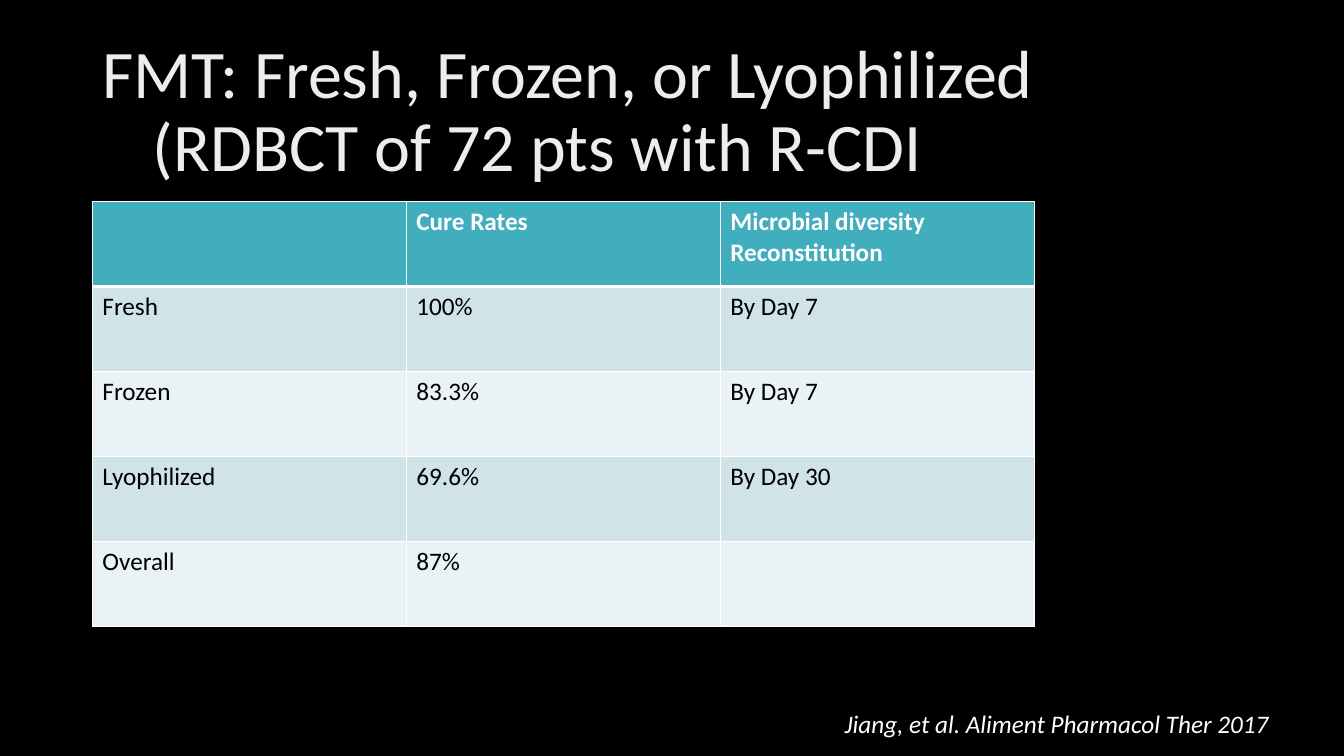
from dataclasses import dataclass

from lxml.etree import SubElement
from pptx import Presentation
from pptx.dml.color import RGBColor
from pptx.enum.text import MSO_ANCHOR as Anchor, MSO_AUTO_SIZE as AutoSize, PP_ALIGN as Align
from pptx.oxml import parse_xml
from pptx.oxml.ns import nsdecls, qn
from pptx.slide import Slide
from pptx.table import _Cell as Cell
from pptx.text.text import Font
from pptx.util import Emu, Pt

PX = 9525
FONT = "Calibri"
BLACK = RGBColor(0x00, 0x00, 0x00)
WHITE = RGBColor(0xFF, 0xFF, 0xFF)
TEAL = RGBColor(0x41, 0xAE, 0xBD)
BAND_DARK = RGBColor(0xCF, 0xE3, 0xE8)
BAND_LIGHT = RGBColor(0xE9, 0xF2, 0xF4)
SILVER = RGBColor(0xBF, 0xBF, 0xBF)
PALE = RGBColor(0xED, 0xED, 0xED)
TITLE_STOPS = ((0, SILVER), (28, PALE), (100, WHITE))
TITLE_ANGLE = 80
COL_WIDTH, ROW_HEIGHT = 299, 81


@dataclass(frozen=True)
class Row:
    texts: tuple[str, str, str]
    fill: RGBColor
    color: RGBColor = BLACK
    bold: bool = False
    top: int = 1
    bottom: int = 1


ROWS = (
    Row(("", "Cure Rates", "Microbial diversity Reconstitution"), TEAL, WHITE, bold=True, bottom=3),
    Row(("Fresh", "100%", "By Day 7"), BAND_DARK, top=3),
    Row(("Frozen", "83.3%", "By Day 7"), BAND_LIGHT),
    Row(("Lyophilized", "69.6%", "By Day 30"), BAND_DARK),
    Row(("Overall", "87%", ""), BAND_LIGHT),
)


def px(n: int) -> Emu:
    return Emu(n * PX)


def style(font: Font, size: float, color: RGBColor, bold: bool = False, italic: bool = False) -> None:
    font.name, font.size = FONT, Pt(size)
    font.bold, font.italic = bold, italic
    font.color.rgb = color


def apply_gradient(font: Font) -> None:
    font.fill.gradient()
    font.fill.gradient_angle = -TITLE_ANGLE % 360
    stops = font.fill.gradient_stops
    for stop, (pos, color) in zip(stops, (TITLE_STOPS[0], TITLE_STOPS[-1])):
        stop.position, stop.color.rgb = pos / 100, color


def add_title(s: Slide) -> None:
    sp = s.shapes.title
    sp.left, sp.top, sp.width, sp.height = px(88), px(38), px(1104), px(139)
    tf = sp.text_frame
    tf.auto_size, tf.vertical_anchor = AutoSize.NONE, Anchor.MIDDLE
    p = tf.paragraphs[0]
    p.text = "FMT: Fresh, Frozen, or Lyophilized\v\t(RDBCT of 72 pts with R-CDI"
    p.alignment, p.line_spacing = Align.LEFT, 0.9
    stops = "".join(
        f'<a:gs pos="{pos * 1000}"><a:srgbClr val="{color}"/></a:gs>' for pos, color in TITLE_STOPS
    )
    for r in p.runs:
        r.font.name, r.font.size = FONT, Pt(48.6)
        r.font._element.insert(0, parse_xml(
            f'<a:gradFill {nsdecls("a")}><a:gsLst>{stops}</a:gsLst>'
            f'<a:lin ang="{TITLE_ANGLE * 60000}" scaled="0"/></a:gradFill>'
        ))


def add_borders(cell: Cell, top: int, bottom: int) -> None:
    tc_pr = cell._tc.get_or_add_tcPr()
    for side, width in (("L", 1), ("R", 1), ("T", top), ("B", bottom)):
        ln = SubElement(tc_pr, qn(f"a:ln{side}"), w=str(Pt(width)))
        fill = SubElement(ln, qn("a:solidFill"))
        SubElement(fill, qn("a:srgbClr"), val=str(WHITE))


def add_results(s: Slide) -> None:
    cols = len(ROWS[0].texts)
    table = s.shapes.add_table(
        len(ROWS), cols, px(88), px(192), px(COL_WIDTH * cols), px(ROW_HEIGHT * len(ROWS))
    ).table
    for col in table.columns:
        col.width = px(COL_WIDTH)
    for row, tr in zip(ROWS, table.rows):
        tr.height = px(ROW_HEIGHT)
        for text, cell in zip(row.texts, tr.cells):
            add_borders(cell, row.top, row.bottom)
            cell.fill.solid()
            cell.fill.fore_color.rgb = row.fill
            p = cell.text_frame.paragraphs[0]
            p.text = text
            for r in p.runs:
                style(r.font, 18, row.color, bold=row.bold)


def add_citation(s: Slide) -> None:
    tf = s.shapes.add_textbox(px(795), px(670), px(458), px(38)).text_frame
    tf.word_wrap, tf.auto_size = True, AutoSize.SHAPE_TO_FIT_TEXT
    p = tf.paragraphs[0]
    p.text = "Jiang, et al. Aliment Pharmacol Ther 2017"
    style(p.runs[0].font, 18, WHITE, italic=True)


def main() -> None:
    prs = Presentation()
    prs.slide_width, prs.slide_height = px(1280), px(720)
    s = prs.slides.add_slide(prs.slide_layouts[5])
    s.background.fill.solid()
    s.background.fill.fore_color.rgb = BLACK
    add_title(s)
    add_results(s)
    add_citation(s)
    prs.save("out.pptx")


if __name__ == "__main__":
    main()
